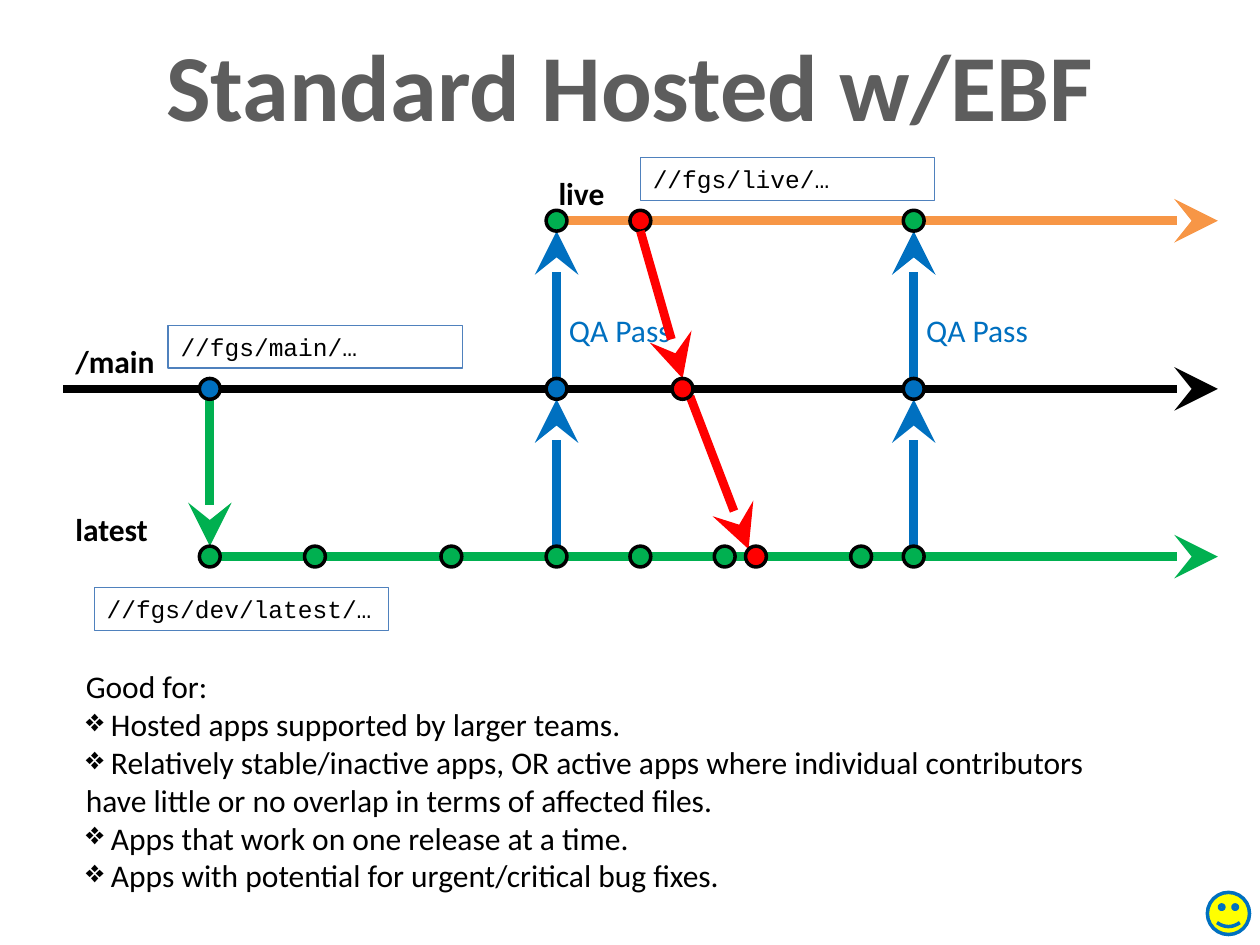
import pptx
import pptx.util
import pptx.dml.color
import pptx.enum.shapes
import pptx.enum.text
import pptx.oxml
import pptx.oxml.ns
import lxml.etree

Cm = pptx.util.Cm
Pt = pptx.util.Pt
RGB = pptx.dml.color.RGBColor
Shape = pptx.enum.shapes.MSO_SHAPE
Align = pptx.enum.text.PP_ALIGN
Anchor = pptx.enum.text.MSO_ANCHOR
qn = pptx.oxml.ns.qn

BLACK = RGB(0, 0, 0)
WHITE = RGB(255, 255, 255)
GRAY = RGB(0x5D, 0x5D, 0x5D)
BLUE = RGB(0x00, 0x70, 0xC0)
GREEN = RGB(0x00, 0xB0, 0x50)
RED = RGB(255, 0, 0)
ORANGE = RGB(0xF7, 0x96, 0x46)
YELLOW = RGB(255, 255, 0)
STEEL = RGB(0x4F, 0x81, 0xBD)

LIVE, MAIN, LATEST = 4.45, 7.84, 11.22
START, PASS_A, PASS_B = 4.23, 11.22, 18.42
FIX_LIVE, FIX_MAIN, FIX_DEV = 12.91, 13.76, 15.24
END = 24.55
DOT = 0.42
RAD = DOT / 2

GOOD = [
    "Good for:",
    " Hosted apps supported by larger teams.",
    " Relatively stable/inactive apps, OR active apps where individual "
    "contributors have little or no overlap in terms of affected files.",
    " Apps that work on one release at a time.",
    " Apps with potential for urgent/critical bug fixes.",
]


def style(frame, size, color, font="Calibri", bold=False):
    for para in frame.paragraphs:
        for run in para.runs:
            run.font.size = Pt(size)
            run.font.name = font
            run.font.bold = bold
            run.font.color.rgb = color


def add_title(slide, text):
    title = slide.shapes.title
    title.left, title.top = Cm(0), Cm(0.42)
    title.width, title.height = Cm(25.4), Cm(2.57)
    frame = title.text_frame
    frame.text = text
    frame.auto_size = pptx.enum.text.MSO_AUTO_SIZE.NONE
    frame.vertical_anchor = Anchor.TOP
    frame.paragraphs[0].alignment = Align.CENTER
    style(frame, 54, GRAY, bold=True)


def add_text(slide, text, x, y, w, h=1.03, color=BLACK, bold=False, wrap=True):
    box = slide.shapes.add_textbox(Cm(x), Cm(y), Cm(w), Cm(h))
    box.text_frame.text = text
    box.text_frame.word_wrap = wrap
    style(box.text_frame, 18, color, bold=bold)
    return box


def add_list(slide, lines):
    box = add_text(slide, "\n".join(lines), 1.48, 13.33, 21.59, 4.88)
    for para in box.text_frame.paragraphs[1:]:
        props = para._p.get_or_add_pPr()
        lxml.etree.SubElement(props, qn("a:buChar")).set("char", "❖")


def add_arrow(slide, x1, y1, x2, y2, color):
    line = slide.shapes.add_connector(
        pptx.enum.shapes.MSO_CONNECTOR.STRAIGHT, Cm(x1), Cm(y1), Cm(x2), Cm(y2))
    line.line.color.rgb = color
    line.line.width = Pt(5)
    tail = lxml.etree.SubElement(line.line._get_or_add_ln(), qn("a:tailEnd"))
    for key, value in (("type", "stealth"), ("w", "lg"), ("len", "lg")):
        tail.set(key, value)
    lxml.etree.SubElement(line._element.spPr, qn("a:effectLst"))


def add_form(slide, kind, x, y, w, h, fill, edge, width):
    form = slide.shapes.add_shape(kind, Cm(x), Cm(y), Cm(w), Cm(h))
    form.shadow.inherit = False
    form.fill.solid()
    form.fill.fore_color.rgb = fill
    form.line.color.rgb = edge
    form.line.width = Pt(width)
    return form


def add_dots(slide, y, color, spots):
    for x in spots:
        add_form(slide, Shape.OVAL, x - RAD, y - RAD, DOT, DOT, color, BLACK, 2)


def add_depot(slide, text, x, y):
    box = add_form(slide, Shape.RECTANGLE, x, y, 5.93, 0.86, WHITE, STEEL, 0.75)
    frame = box.text_frame
    frame.text = text
    frame.word_wrap = True
    frame.vertical_anchor = Anchor.TOP
    frame.paragraphs[0].alignment = Align.LEFT
    style(frame, 14, BLACK, "Courier New")


def main():
    deck = pptx.Presentation()
    deck.slide_width, deck.slide_height = Cm(25.4), Cm(19.05)
    slide = deck.slides.add_slide(deck.slide_layouts[5])
    add_title(slide, "Standard Hosted w/EBF")

    for text, x, y in (("live", 11.01, LIVE), ("/main", 1.27, MAIN),
                       ("latest", 1.27, LATEST)):
        add_text(slide, text, x, y - 1.06, 2.75, bold=True)

    add_arrow(slide, FIX_MAIN + 0.15, MAIN + 0.15,
              FIX_DEV - 0.15, LATEST - 0.15, RED)
    for x in (PASS_A, PASS_B):
        for low, high in ((MAIN, LIVE), (LATEST, MAIN)):
            add_arrow(slide, x, low, x, high + RAD, BLUE)
        add_text(slide, "QA Pass", x, 6.14, 2.6, color=BLUE, wrap=False)
    add_arrow(slide, START, MAIN, START, LATEST - RAD, GREEN)
    for x, y, color in ((PASS_A + RAD, LIVE, ORANGE), (1.27, MAIN, BLACK),
                        (START - RAD, LATEST, GREEN)):
        add_arrow(slide, x, y, END, y, color)

    add_dots(slide, LIVE, GREEN, (PASS_A, PASS_B))
    add_dots(slide, MAIN, BLUE, (START, PASS_A, PASS_B))
    add_dots(slide, LATEST, GREEN,
             (START, 6.35, 9.1, PASS_A, FIX_LIVE, 14.61, 17.36, PASS_B))
    add_dots(slide, LIVE, RED, (FIX_LIVE,))
    add_arrow(slide, FIX_LIVE, LIVE + RAD, FIX_MAIN, MAIN - RAD, RED)
    add_dots(slide, MAIN, RED, (FIX_MAIN,))
    add_dots(slide, LATEST, RED, (FIX_DEV,))

    add_depot(slide, "//fgs/main/…", 3.39, 6.56)
    add_depot(slide, "//fgs/dev/latest/…", 1.9, 11.85)
    add_depot(slide, "//fgs/live/…", 12.91, 3.18)
    add_list(slide, GOOD)
    add_form(slide, Shape.SMILEY_FACE, 24.34, 17.99, 0.85, 0.85, YELLOW, BLUE, 2)
    deck.save("out.pptx")


if __name__ == "__main__":
    main()
